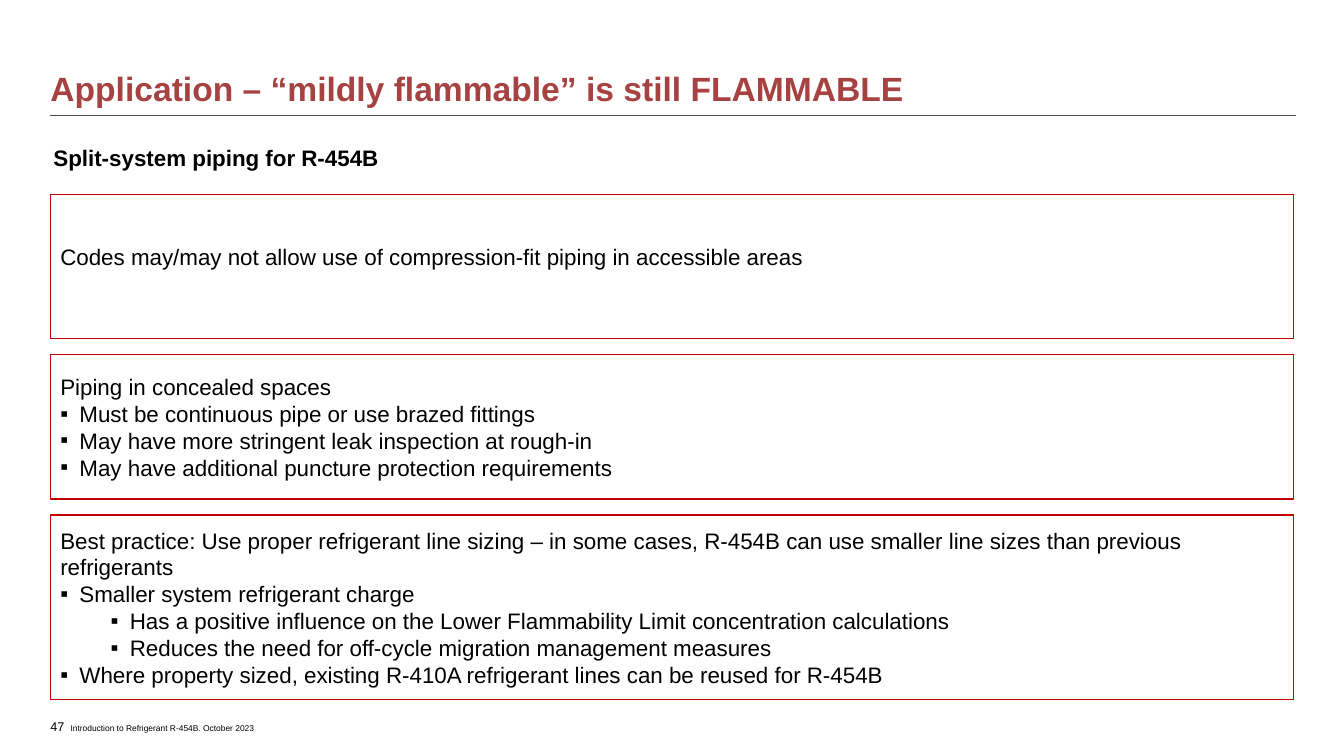
from dataclasses import dataclass

from lxml.etree import SubElement
from pptx import Presentation
from pptx.dml.color import RGBColor
from pptx.enum.shapes import MSO_CONNECTOR, MSO_SHAPE
from pptx.enum.text import MSO_ANCHOR, MSO_AUTO_SIZE, PP_ALIGN
from pptx.oxml.ns import qn
from pptx.slide import Slide
from pptx.text.text import TextFrame, _Paragraph
from pptx.util import Inches, Pt

TITLE_RED = RGBColor(0xA6, 0x42, 0x41)
BOX_RED = RGBColor(0xC0, 0x00, 0x00)
RULE_BROWN = RGBColor(0x52, 0x47, 0x43)
BLACK = RGBColor(0x00, 0x00, 0x00)

LEFT = 0.5
WIDTH = 12.35
BOX_WIDTH = 12.33
BOX_TOP = 1.93
BOX_GAP = 0.16
HANGING = 0.19
LEVEL_STEP = 0.5


@dataclass(frozen=True)
class Point:
    text: str
    level: int = 0


@dataclass(frozen=True)
class Practice:
    heading: str
    height: float = 1.43
    points: tuple[Point, ...] = ()
    bottom_inset: float = 0.05


@dataclass(frozen=True)
class FooterPart:
    text: str
    left: float
    top: float
    width: float
    height: float
    size: float
    anchor: MSO_ANCHOR
    auto_size: MSO_AUTO_SIZE


PRACTICES = (
    Practice("Codes may/may not allow use of compression-fit piping in accessible areas",
             bottom_inset=0.24),
    Practice("Piping in concealed spaces", points=(
        Point("Must be continuous pipe or use brazed fittings"),
        Point("May have more stringent leak inspection at rough-in"),
        Point("May have additional puncture protection requirements"),
    )),
    Practice("Best practice: Use proper refrigerant line sizing – in some cases, "
             "R-454B can use smaller line sizes than previous refrigerants",
             height=1.83, points=(
        Point("Smaller system refrigerant charge"),
        Point("Has a positive influence on the Lower Flammability Limit "
              "concentration calculations", 1),
        Point("Reduces the need for off-cycle migration management measures", 1),
        Point("Where property sized, existing R-410A refrigerant lines can be "
              "reused for R-454B"),
    )),
)

FOOTER = (
    FooterPart("47", LEFT, 7.09, 0.39, 0.24, 9, MSO_ANCHOR.MIDDLE, MSO_AUTO_SIZE.NONE),
    FooterPart("Introduction to Refrigerant R-454B. October 2023", 0.7, 7.17, 2.2, 0.1, 6,
               MSO_ANCHOR.TOP, MSO_AUTO_SIZE.SHAPE_TO_FIT_TEXT),
)


def set_frame(frame: TextFrame, anchor: MSO_ANCHOR, left: float = 0, top: float = 0,
              right: float = 0, bottom: float = 0) -> None:
    frame.word_wrap = True
    frame.auto_size = MSO_AUTO_SIZE.NONE
    frame.vertical_anchor = anchor
    frame.margin_left, frame.margin_top = Inches(left), Inches(top)
    frame.margin_right, frame.margin_bottom = Inches(right), Inches(bottom)


def set_font(paragraph: _Paragraph, size: float, color: RGBColor = BLACK,
             bold: bool = False) -> None:
    paragraph.alignment = PP_ALIGN.LEFT
    font = paragraph.font
    font.name, font.size, font.bold = "Arial", Pt(size), bold
    font.color.rgb = color


def set_bullet(paragraph: _Paragraph, level: int) -> None:
    paragraph.level = level
    properties = paragraph._p.get_or_add_pPr()
    properties.set("marL", str(Inches(HANGING + LEVEL_STEP * level)))
    properties.set("indent", str(Inches(-HANGING)))
    SubElement(properties, qn("a:buFont"), typeface="Arial")
    SubElement(properties, qn("a:buChar"), char="▪")


def add_title(slide: Slide) -> None:
    title = slide.shapes.title
    title.left, title.top = Inches(LEFT), Inches(0.21)
    title.width, title.height = Inches(WIDTH), Inches(0.87)
    set_frame(title.text_frame, MSO_ANCHOR.BOTTOM)
    heading = title.text_frame.paragraphs[0]
    heading.text = "Application – “mildly flammable” is still FLAMMABLE"
    heading.line_spacing = 0.9
    set_font(heading, 24, TITLE_RED, bold=True)


def add_subtitle(slide: Slide) -> None:
    subtitle = slide.placeholders[1]
    subtitle.left, subtitle.top = Inches(0.53), Inches(1.35)
    subtitle.width, subtitle.height = Inches(WIDTH), Inches(0.58)
    set_frame(subtitle.text_frame, MSO_ANCHOR.TOP, 0, 0.05, 0.1, 0.05)
    topic = subtitle.text_frame.paragraphs[0]
    topic.text = "Split-system piping for R-454B"
    topic.line_spacing = Pt(21)
    topic.space_before = Pt(0)
    topic.space_after = Pt(3)
    properties = topic._p.get_or_add_pPr()
    properties.set("marL", "0")
    properties.set("indent", "0")
    SubElement(properties, qn("a:buNone"))
    set_font(topic, 16, bold=True)


def add_rule(slide: Slide) -> None:
    rule = slide.shapes.add_connector(MSO_CONNECTOR.STRAIGHT, Inches(LEFT), Inches(1.15),
                                      Inches(LEFT + WIDTH), Inches(1.15))
    rule.line.color.rgb = RULE_BROWN
    rule.line.width = Pt(0.75)
    SubElement(rule._element.spPr, qn("a:effectLst"))


def add_practice(slide: Slide, practice: Practice, top: float) -> None:
    box = slide.shapes.add_shape(MSO_SHAPE.RECTANGLE, Inches(LEFT), Inches(top),
                                 Inches(BOX_WIDTH), Inches(practice.height))
    box.shadow.inherit = False
    box.fill.background()
    box.line.color.rgb = BOX_RED
    box.line.width = Pt(1)
    frame = box.text_frame
    set_frame(frame, MSO_ANCHOR.MIDDLE, 0.1, 0.05, 0.1, practice.bottom_inset)
    frame.text = practice.heading
    for point in practice.points:
        paragraph = frame.add_paragraph()
        paragraph.text = point.text
        set_bullet(paragraph, point.level)
    for paragraph in frame.paragraphs:
        set_font(paragraph, 16)


def add_footer_part(slide: Slide, part: FooterPart) -> None:
    footer = slide.shapes.add_textbox(Inches(part.left), Inches(part.top),
                                      Inches(part.width), Inches(part.height))
    set_frame(footer.text_frame, part.anchor)
    footer.text_frame.auto_size = part.auto_size
    footer.text_frame.text = part.text
    set_font(footer.text_frame.paragraphs[0], part.size)


def main() -> None:
    presentation = Presentation()
    presentation.slide_width, presentation.slide_height = Inches(13.33), Inches(7.5)
    slide = presentation.slides.add_slide(presentation.slide_layouts[1])

    # Heading
    add_rule(slide)
    add_title(slide)
    add_subtitle(slide)

    # Stacked boxes, one per practice
    top = BOX_TOP
    for practice in PRACTICES:
        add_practice(slide, practice, top)
        top += practice.height + BOX_GAP

    # Page number and footer
    for part in FOOTER:
        add_footer_part(slide, part)

    presentation.save("out.pptx")


if __name__ == "__main__":
    main()
